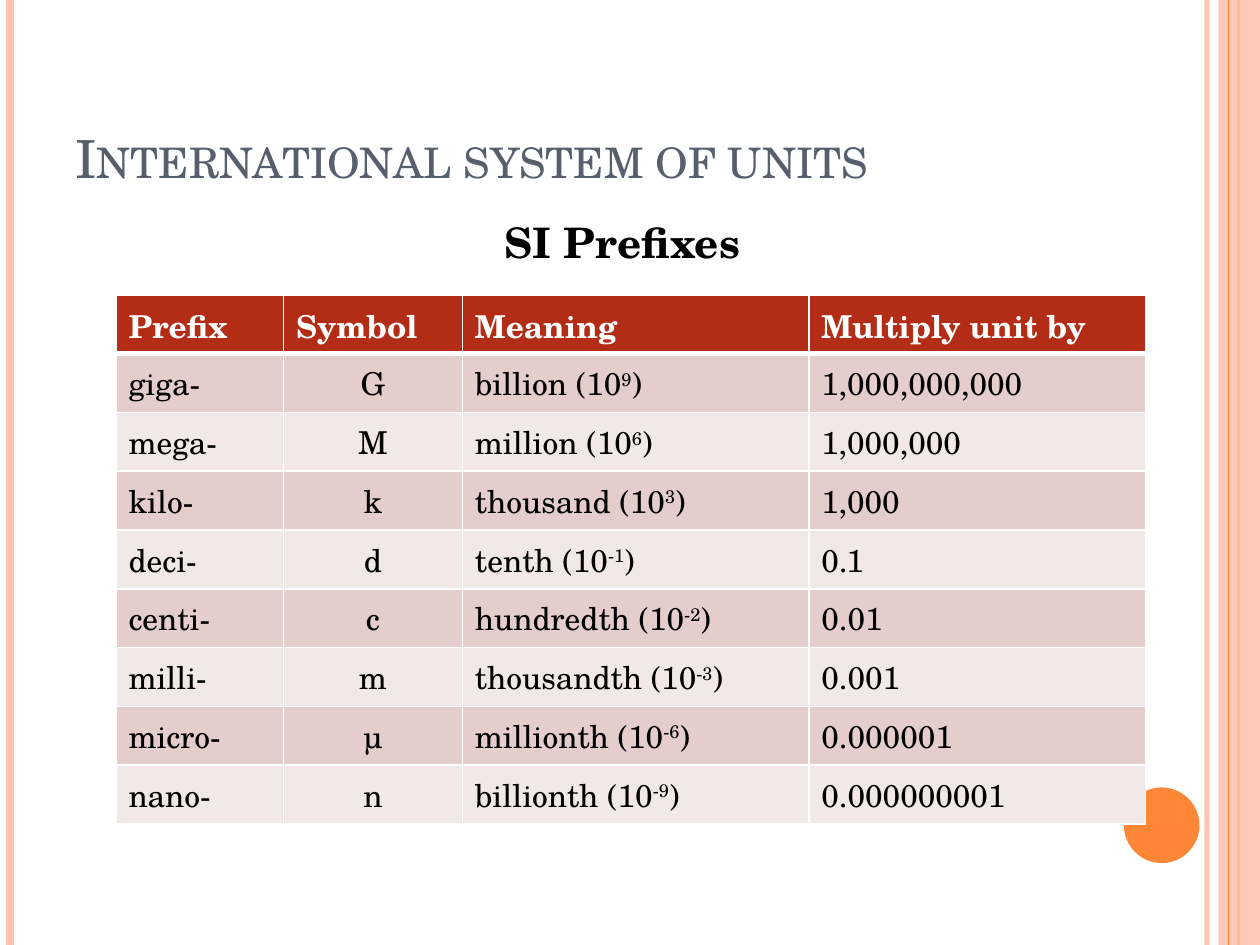
from dataclasses import dataclass

from lxml import etree
from pptx import Presentation
from pptx.dml.color import RGBColor
from pptx.enum.shapes import MSO_CONNECTOR, MSO_SHAPE
from pptx.enum.text import MSO_ANCHOR, PP_ALIGN
from pptx.oxml.ns import qn
from pptx.util import Inches, Pt

LINE = MSO_CONNECTOR.STRAIGHT
RECT = MSO_SHAPE.RECTANGLE
OVAL = MSO_SHAPE.OVAL
TOP = MSO_ANCHOR.TOP
BOTTOM = MSO_ANCHOR.BOTTOM
LEFT = PP_ALIGN.LEFT
CENTER = PP_ALIGN.CENTER


@dataclass(frozen=True)
class Theme:
    font: str = "TeX Gyre Schola"
    white: str = "FFFFFF"
    black: str = "000000"
    slate: str = "575F6D"
    peach: str = "FEC3AE"
    orange: str = "FE8637"
    red: str = "B32C16"
    bands: tuple = ("E5CDCC", "F2E8E8")
    title: int = 30
    head: int = 24
    body: int = 18


THEME = Theme()
HEADS = ("Prefix", "Symbol", "Meaning", "Multiply unit by")
UNITS = (
    ("giga-", "G", "billion", "9", "1,000,000,000"),
    ("mega-", "M", "million", "6", "1,000,000"),
    ("kilo-", "k", "thousand", "3", "1,000"),
    ("deci-", "d", "tenth", "-1", "0.1"),
    ("centi-", "c", "hundredth", "-2", "0.01"),
    ("milli-", "m", "thousandth", "-3", "0.001"),
    ("micro-", "µ", "millionth", "-6", "0.000001"),
    ("nano-", "n", "billionth", "-9", "0.000000001"),
)
COLS = (1.33, 1.42, 2.75, 2.67)
HEIGHT = 4.2


def set_alpha(part, value):
    color = next(part.iter(qn("a:srgbClr")))
    etree.SubElement(color, qn("a:alpha"), val=str(value * 1000))


def add_rule(slide, x, color, width, alpha=100):
    rule = slide.shapes.add_connector(LINE, Inches(x), 0, Inches(x), Inches(7.5))
    rule.line.color.rgb = RGBColor.from_string(color)
    rule.line.width = Pt(width)
    props = rule._element.spPr
    if alpha < 100:
        set_alpha(props, alpha)
    etree.SubElement(props, qn("a:effectLst"))


def add_block(slide, kind, box, color, alpha=100):
    block = slide.shapes.add_shape(kind, *map(Inches, box))
    block.shadow.inherit = False
    block.line.fill.background()
    block.fill.solid()
    block.fill.fore_color.rgb = RGBColor.from_string(color)
    if alpha < 100:
        set_alpha(block._element.spPr, alpha)


def add_run(para, text, color, size, bold=False, **extra):
    run = para.add_run()
    run.text = text
    looks = {"name": THEME.font, "size": Pt(size), "bold": bold}
    for name, value in looks.items():
        setattr(run.font, name, value)
    run.font.color.rgb = RGBColor.from_string(color)
    for name, value in extra.items():
        run._r.get_or_add_rPr().set(name, value)


def add_label(slide, box, text, color, size, anchor=TOP, **looks):
    frame = slide.shapes.add_textbox(*map(Inches, box)).text_frame
    frame.word_wrap = True
    frame.vertical_anchor = anchor
    add_run(frame.paragraphs[0], text, color, size, **looks)


def set_edges(cell, widths):
    props = cell._tc.get_or_add_tcPr()
    for side, width in widths.items():
        edge = etree.SubElement(props, qn(f"a:ln{side}"), w=str(Pt(width)))
        fill = etree.SubElement(edge, qn("a:solidFill"))
        etree.SubElement(fill, qn("a:srgbClr"), val=THEME.white)


def fill_cell(cell, row, parts, align=LEFT):
    top = 3 if row == 1 else 1
    low = 3 if row == 0 else 1
    set_edges(cell, {"L": 1, "R": 1, "T": top, "B": low})
    cell.fill.solid()
    back = THEME.bands[(row - 1) % 2] if row else THEME.red
    cell.fill.fore_color.rgb = RGBColor.from_string(back)
    para = cell.text_frame.paragraphs[0]
    para.alignment = align
    color = THEME.black if row else THEME.white
    for text, extra in parts:
        add_run(para, text, color, THEME.body, row == 0, **extra)


def add_grid(slide):
    count = len(UNITS) + 1
    box = (0.92, 2.34, sum(COLS), HEIGHT)
    grid = slide.shapes.add_table(count, len(COLS), *map(Inches, box)).table
    for col, width in zip(grid.columns, COLS):
        col.width = Inches(width)
    for line in grid.rows:
        line.height = Inches(HEIGHT / count)
    for col, text in enumerate(HEADS):
        fill_cell(grid.cell(0, col), 0, [(text, {})])
    for row, (prefix, sign, word, power, factor) in enumerate(UNITS, 1):
        meaning = [(f"{word} (10", {}), (power, {"baseline": "30000"}), (")", {})]
        fill_cell(grid.cell(row, 0), row, [(prefix, {})])
        fill_cell(grid.cell(row, 1), row, [(sign, {})], CENTER)
        fill_cell(grid.cell(row, 2), row, meaning)
        fill_cell(grid.cell(row, 3), row, [(factor, {})])


def main():
    deck = Presentation()
    deck.slide_width = Inches(10)
    deck.slide_height = Inches(7.5)
    slide = deck.slides.add_slide(deck.slide_layouts[6])
    add_rule(slide, 9.58, THEME.peach, 3, 93)
    add_rule(slide, 0.08, THEME.peach, 4.5)
    add_rule(slide, 9.83, THEME.orange, 1.5)
    add_block(slide, RECT, (9.67, 0, 0.33, 7.5), THEME.peach, 87)
    add_rule(slide, 9.75, THEME.orange, 0.75)
    add_block(slide, OVAL, (8.92, 6.25, 0.6, 0.6), THEME.orange)
    add_label(slide, (0.5, 0.3, 8.17, 1.25), "International system of units",
              THEME.slate, THEME.title, BOTTOM, cap="small")
    add_grid(slide)
    add_label(slide, (3.91, 1.67, 2.33, 0.5), "SI Prefixes",
              THEME.black, THEME.head, bold=True)
    deck.save("out.pptx")


if __name__ == "__main__":
    main()
